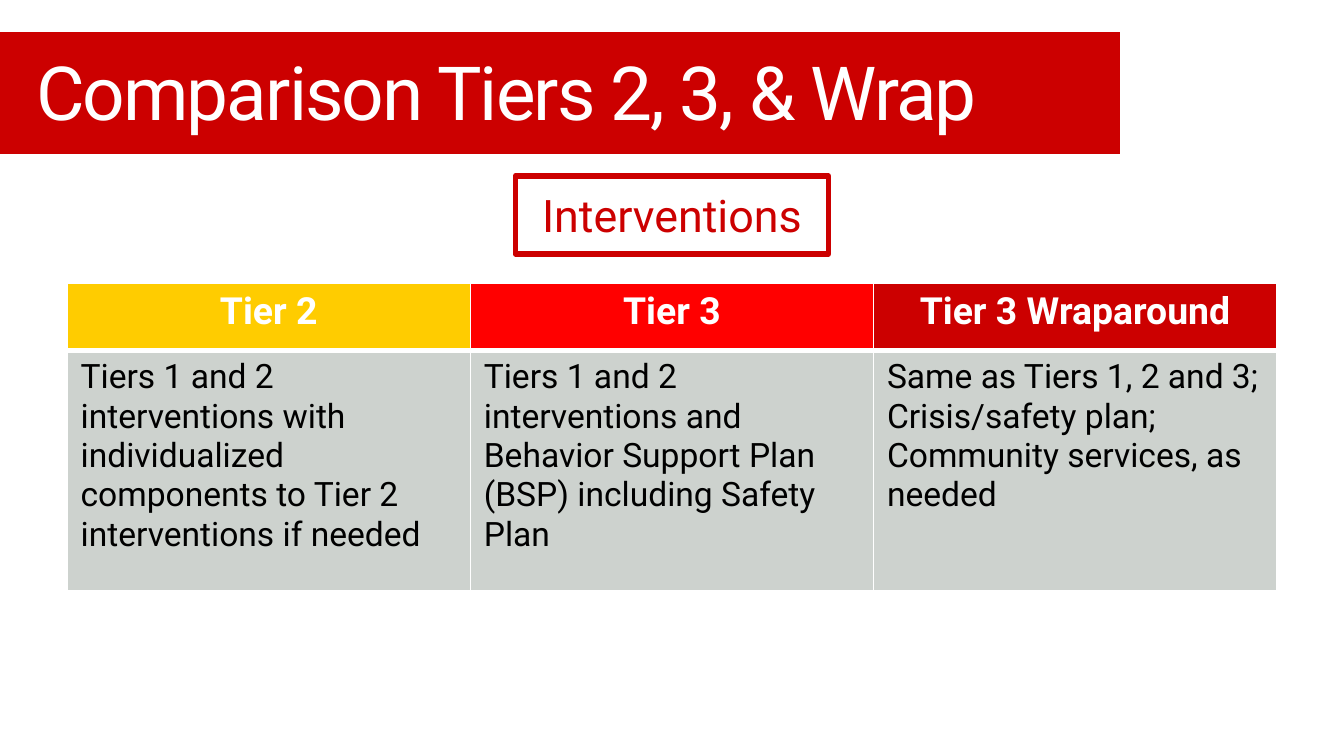
import pptx
import pptx.util
import pptx.dml.color
import pptx.enum.shapes
import pptx.enum.text
import pptx.oxml
import pptx.oxml.ns

Inches, Pt = pptx.util.Inches, pptx.util.Pt
ALIGN = pptx.enum.text.PP_ALIGN
FONT = "Roboto"
WHITE, BLACK, CRIMSON, GRAY = "FFFFFF", "000000", "CC0000", "CDD2CE"

# Content
TITLE = "Comparison Tiers 2, 3, & Wrap"
TOPIC = "Interventions"
TIERS = [  # heading, heading colour, interventions
    ("Tier 2", "FFCC00",
     "Tiers 1 and 2 interventions with individualized components to Tier 2 interventions if needed"),
    ("Tier 3", "FF0000",
     "Tiers 1 and 2 interventions and Behavior Support Plan (BSP) including Safety Plan"),
    ("Tier 3 Wraparound", CRIMSON,
     "Same as Tiers 1, 2 and 3; Crisis/safety plan; Community services, as needed"),
]

# Layout in inches, on a 16:9 page
WIDTH, MARGIN = 10, 0.5
HEIGHT = WIDTH * 9 / 16
TABLE_TOP, ROW_HEIGHTS = 2.11, (0.5, 1.79)
TOPIC_WIDTH = 2.33


def color(code):
    return pptx.dml.color.RGBColor.from_string(code)


def write(frame, text, size, code, bold=False, align=ALIGN.LEFT):
    frame.text = text
    para = frame.paragraphs[0]
    para.alignment = align
    span = para.runs[0]
    span.font.name, span.font.size, span.font.bold = FONT, Pt(size), bold
    span.font.color.rgb = color(code)
    return span


def add_box(page, left, top, width, height, fill, line, line_width):
    box = page.shapes.add_shape(pptx.enum.shapes.MSO_SHAPE.RECTANGLE,
                                Inches(left), Inches(top), Inches(width), Inches(height))
    box.shadow.inherit = False
    box.fill.solid()
    box.fill.fore_color.rgb = color(fill)
    box.line.color.rgb = color(line)
    box.line.width = Pt(line_width)
    return box


def add_borders(cell, bottom):
    """White cell borders, 1 pt except for the bottom one."""
    properties = cell._tc.get_or_add_tcPr()
    for side, points in (("L", 1), ("R", 1), ("T", 1), ("B", bottom)):
        properties.append(pptx.oxml.parse_xml(
            f'<a:ln{side} {pptx.oxml.ns.nsdecls("a")} w="{Pt(points)}">'
            f'<a:solidFill><a:srgbClr val="{WHITE}"/></a:solidFill></a:ln{side}>'))


def fill_cell(cell, text, size, code, fill, bold, align, bottom):
    write(cell.text_frame, text, size, code, bold, align)
    add_borders(cell, bottom)  # borders precede the fill in the XML
    cell.fill.solid()
    cell.fill.fore_color.rgb = color(fill)


deck = pptx.Presentation()
deck.slide_width, deck.slide_height = Inches(WIDTH), Inches(HEIGHT)
page = deck.slides.add_slide(deck.slide_layouts[6])

# Title banner
add_box(page, -0.08, 0.23, 8.42, 0.92, CRIMSON, WHITE, 0.75)
title = page.shapes.add_textbox(Inches(0.17), Inches(0.27), Inches(8.17), Inches(0.81))
title.text_frame.word_wrap = True
title.text_frame.vertical_anchor = pptx.enum.text.MSO_ANCHOR.MIDDLE
title_span = write(title.text_frame, TITLE, 40, WHITE)
title_span._r.get_or_add_rPr().set("spc", "-100")

# Tier table
table = page.shapes.add_table(
    len(ROW_HEIGHTS), len(TIERS), Inches(MARGIN), Inches(TABLE_TOP),
    Inches(WIDTH - 2 * MARGIN), Inches(sum(ROW_HEIGHTS))).table
for row, height in zip(table.rows, ROW_HEIGHTS):
    row.height = Inches(height)
for column, (heading, heading_fill, interventions) in enumerate(TIERS):
    fill_cell(table.cell(0, column), heading, 20, WHITE, heading_fill, True, ALIGN.CENTER, 3)
    fill_cell(table.cell(1, column), interventions, 18, BLACK, GRAY, False, ALIGN.LEFT, 1)

# Topic label, centred on the page
topic = add_box(page, (WIDTH - TOPIC_WIDTH) / 2, 1.31, TOPIC_WIDTH, 0.58, WHITE, CRIMSON, 3)
topic.text_frame.vertical_anchor = pptx.enum.text.MSO_ANCHOR.MIDDLE
write(topic.text_frame, TOPIC, 24, CRIMSON, align=ALIGN.CENTER)

deck.save("out.pptx")
